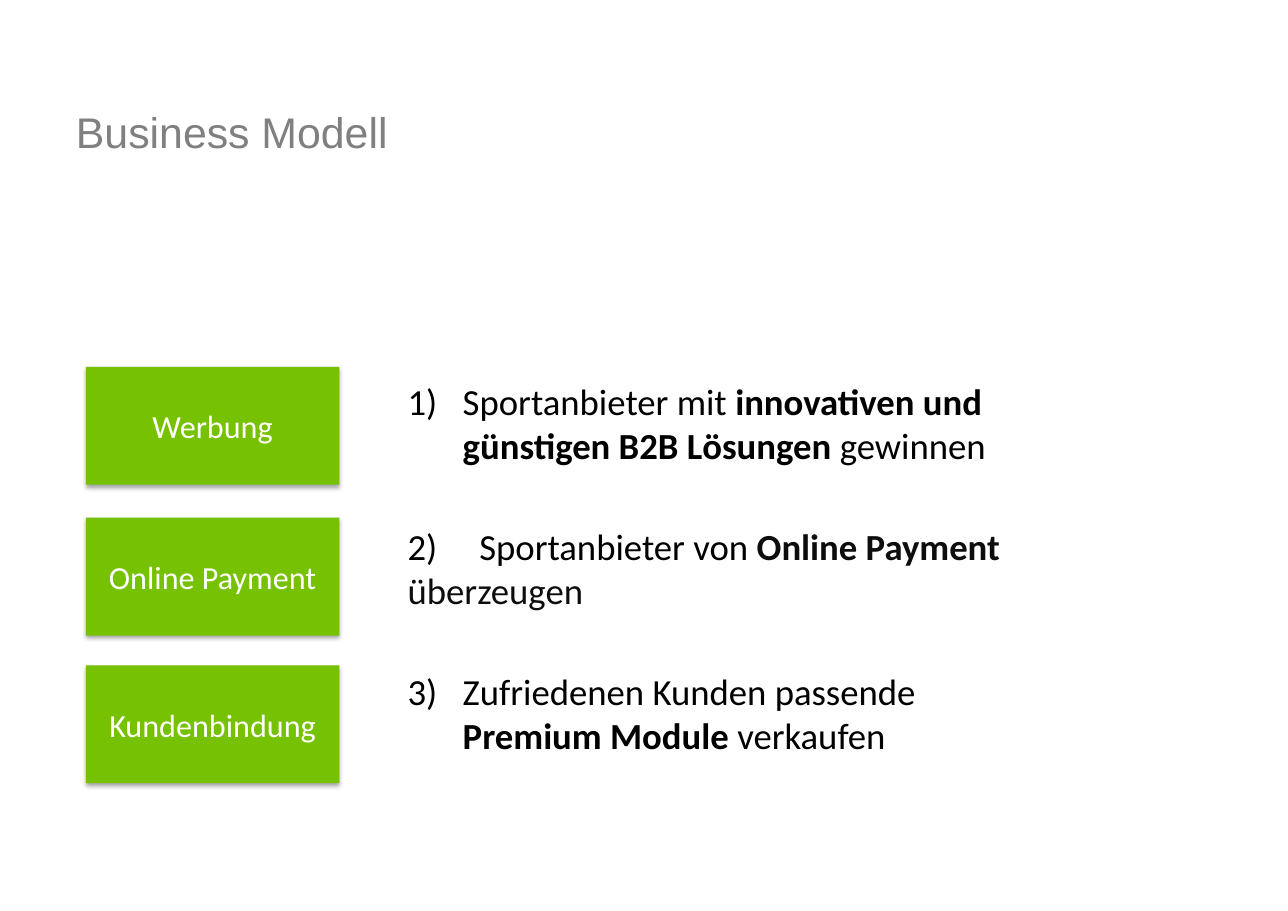
from pptx import Presentation
from pptx.dml.color import RGBColor
from pptx.enum.shapes import MSO_SHAPE as SHAPE
from pptx.enum.text import MSO_ANCHOR as ANCHOR, PP_ALIGN as ALIGN
from pptx.oxml import parse_xml
from pptx.oxml.ns import nsdecls
from pptx.util import Inches, Pt

COLORS = {"title": "808080", "box": "76C101", "label": "FFFFFF",
          "text": "000000", "soft": "0D0D0D", "shadow": "000000"}


def style(font, name, size, color, bold=False):
    font.name, font.size, font.bold = name, Pt(size), bold
    font.color.rgb = RGBColor.from_string(COLORS[color])


def text_frame_at(left, top, width, height):
    frame = slide.shapes.add_textbox(
        Inches(left), Inches(top), Inches(width), Inches(height)).text_frame
    frame.word_wrap = True
    frame.margin_left = frame.margin_right = Inches(0.11)
    frame.margin_top = frame.margin_bottom = Inches(0.06)
    return frame


prs = Presentation()
prs.slide_width, prs.slide_height = Inches(11.69), Inches(8.27)
slide = prs.slides.add_slide(prs.slide_layouts[6])

# Title
title = text_frame_at(0.58, 0.33, 7.64, 1.73)
title.vertical_anchor = ANCHOR.MIDDLE
title.text = "Business Modell"
style(title.paragraphs[0].runs[0].font, "Arial", 28, "title")

# Three steps: (text, colour, bold), None is a line break
steps = [
    [("Sportanbieter mit ", "text", False), ("innovativen und", "text", True), None,
     ("günstigen B2B Lösungen ", "text", True), ("gewinnen", "text", False)],
    [("2)\tSportanbieter von ", "text", False), ("Online Payment", "soft", True), None,
     ("überzeugen", "soft", False)],
    [("Zufriedenen Kunden passende", "text", False), None,
     ("Premium Module ", "text", True), ("verkaufen", "text", False)],
]
body = text_frame_at(3.59, 3.38, 7.18, 4.04)
for number, parts in enumerate(steps, 1):
    step = body.paragraphs[0] if number == 1 else body.add_paragraph()
    props = step._p.get_or_add_pPr()
    if number == 2:  # typed number, followed by a tab
        props.append(parse_xml(
            f'<a:tabLst {nsdecls("a")}><a:tab pos="{Inches(0.65)}" algn="l"/></a:tabLst>'))
    else:  # automatic number with hanging indent
        props.set("marL", str(Inches(0.5)))
        props.set("indent", str(Inches(-0.5)))
        props.append(parse_xml(
            f'<a:buAutoNum {nsdecls("a")} type="arabicParenR" startAt="{number}"/>'))
    if number > 1:
        step.space_before = Pt(37)
    style(step.font, "Calibri", 24, "text")
    for part in parts:
        if part is None:
            step.add_line_break()
            continue
        wording, color, bold = part
        run = step.add_run()
        run.text = wording
        style(run.font, "Calibri", 24, color, bold)

# Green boxes with a soft shadow below
for label, top in [("Werbung", 3.33), ("Online Payment", 4.7), ("Kundenbindung", 6.04)]:
    box = slide.shapes.add_shape(
        SHAPE.RECTANGLE, Inches(0.78), Inches(top), Inches(2.3), Inches(1.07))
    box.fill.solid()
    box.fill.fore_color.rgb = RGBColor.from_string(COLORS["box"])
    box.line.fill.background()
    box._element.spPr.append(parse_xml(
        f'<a:effectLst {nsdecls("a")}><a:outerShdw blurRad="{Pt(3.1)}" dist="{Pt(1.8)}" '
        f'dir="5400000" rotWithShape="0"><a:srgbClr val="{COLORS["shadow"]}">'
        '<a:alpha val="35000"/></a:srgbClr></a:outerShdw></a:effectLst>'))
    box.text_frame.text = label
    box.text_frame.vertical_anchor = ANCHOR.MIDDLE
    caption = box.text_frame.paragraphs[0]
    caption.alignment = ALIGN.CENTER
    style(caption.runs[0].font, "Calibri", 21, "label")

prs.save("out.pptx")
